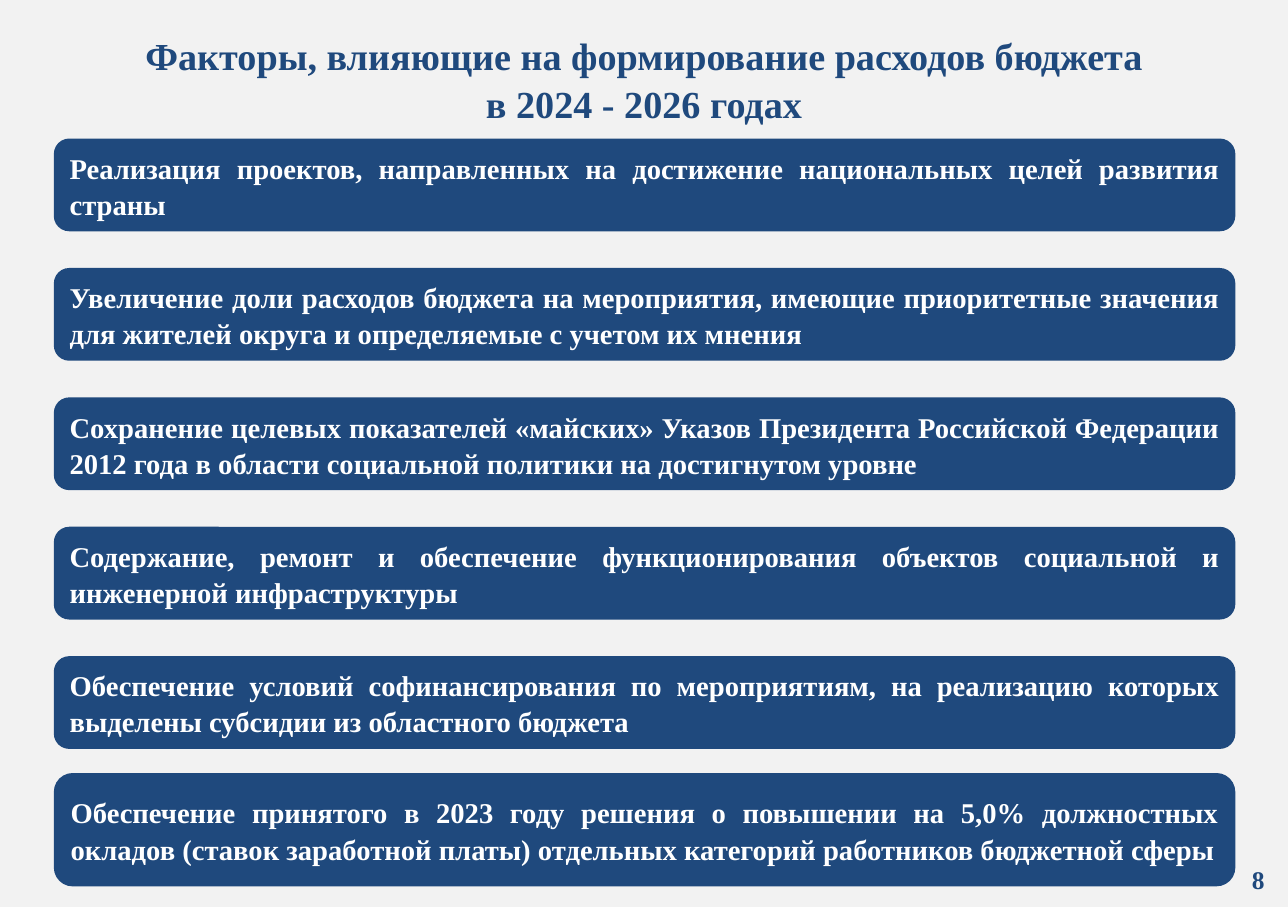
from pptx import Presentation
from pptx import util as u
from pptx.dml.color import RGBColor
from pptx.enum import shapes, text

NAVY = RGBColor(0x1F, 0x49, 0x7D)
WHITE = RGBColor(0xFF, 0xFF, 0xFF)
PALE = RGBColor(0xF2, 0xF2, 0xF2)
FONT = "Times New Roman"
WIDTH, HEIGHT = 11.25, 7.92

# Factor bars: equal pitch, with a taller bar closing the list
BAR_LEFT, BAR_WIDTH = 0.47, 10.32
BAR_TOP, BAR_PITCH, BAR_HEIGHT = 1.21, 1.13, 0.81
LAST_BAR = (BAR_LEFT, 6.75, BAR_WIDTH, 0.99)

TITLE = "Факторы, влияющие на формирование расходов бюджета\vв 2024 - 2026 годах"
FACTORS = [
    "Реализация проектов, направленных на достижение национальных целей развития страны",
    "Увеличение доли расходов бюджета на мероприятия, имеющие приоритетные значения "
    "для жителей округа и определяемые с учетом их мнения",
    "Сохранение целевых показателей «майских» Указов Президента Российской Федерации "
    "2012 года в области социальной политики на достигнутом уровне",
    "Содержание, ремонт и обеспечение функционирования объектов социальной "
    "и инженерной инфраструктуры",
    "Обеспечение условий софинансирования по мероприятиям, на реализацию которых "
    "выделены субсидии из областного бюджета",
]
LAST_FACTOR = (
    "Обеспечение принятого в 2023 году решения о повышении на 5,0% должностных "
    "окладов (ставок заработной платы) отдельных категорий работников бюджетной сферы"
)


def inches(box):
    return [u.Inches(length) for length in box]


def write(shape, words, size, color, align, margin=None):
    frame = shape.text_frame
    frame.text = words
    frame.word_wrap = True
    frame.auto_size = text.MSO_AUTO_SIZE.NONE
    frame.vertical_anchor = text.MSO_ANCHOR.MIDDLE
    if margin is not None:
        frame.margin_left = frame.margin_right = u.Inches(margin)
        frame.margin_top = frame.margin_bottom = u.Inches(margin)
    para = frame.paragraphs[0]
    para.alignment = align
    para.line_spacing = 1.05
    para.space_before = u.Pt(0)
    for span in para.runs:
        span.font.name = FONT
        span.font.size = u.Pt(size)
        span.font.bold = True
        span.font.color.rgb = color


def add_title(page, box):
    title = page.shapes.title
    title.left, title.top, title.width, title.height = inches(box)
    write(title, TITLE, 24, NAVY, text.PP_ALIGN.CENTER, 0)


def add_bar(page, box, words):
    bar = page.shapes.add_shape(shapes.MSO_SHAPE.ROUNDED_RECTANGLE, *inches(box))
    bar.shadow.inherit = False
    bar.fill.solid()
    bar.fill.fore_color.rgb = NAVY
    bar.line.fill.background()
    write(bar, words, 18, WHITE, text.PP_ALIGN.JUSTIFY)


def add_factors(page):
    for row, words in enumerate(FACTORS):
        top = BAR_TOP + row * BAR_PITCH
        add_bar(page, (BAR_LEFT, top, BAR_WIDTH, BAR_HEIGHT), words)
    add_bar(page, LAST_BAR, LAST_FACTOR)


def add_page_number(page, box):
    number = page.shapes.add_textbox(*inches(box))
    write(number, "8", 16, NAVY, text.PP_ALIGN.CENTER, 0)


def main():
    deck = Presentation()
    deck.slide_width, deck.slide_height = inches((WIDTH, HEIGHT))
    page = deck.slides.add_slide(deck.slide_layouts[5])
    page.background.fill.solid()
    page.background.fill.fore_color.rgb = PALE

    add_title(page, (0, 0.22, WIDTH, 0.92))
    add_factors(page)
    add_page_number(page, (10.74, 7.45, 0.5, 0.44))
    deck.save("out.pptx")


if __name__ == "__main__":
    main()
